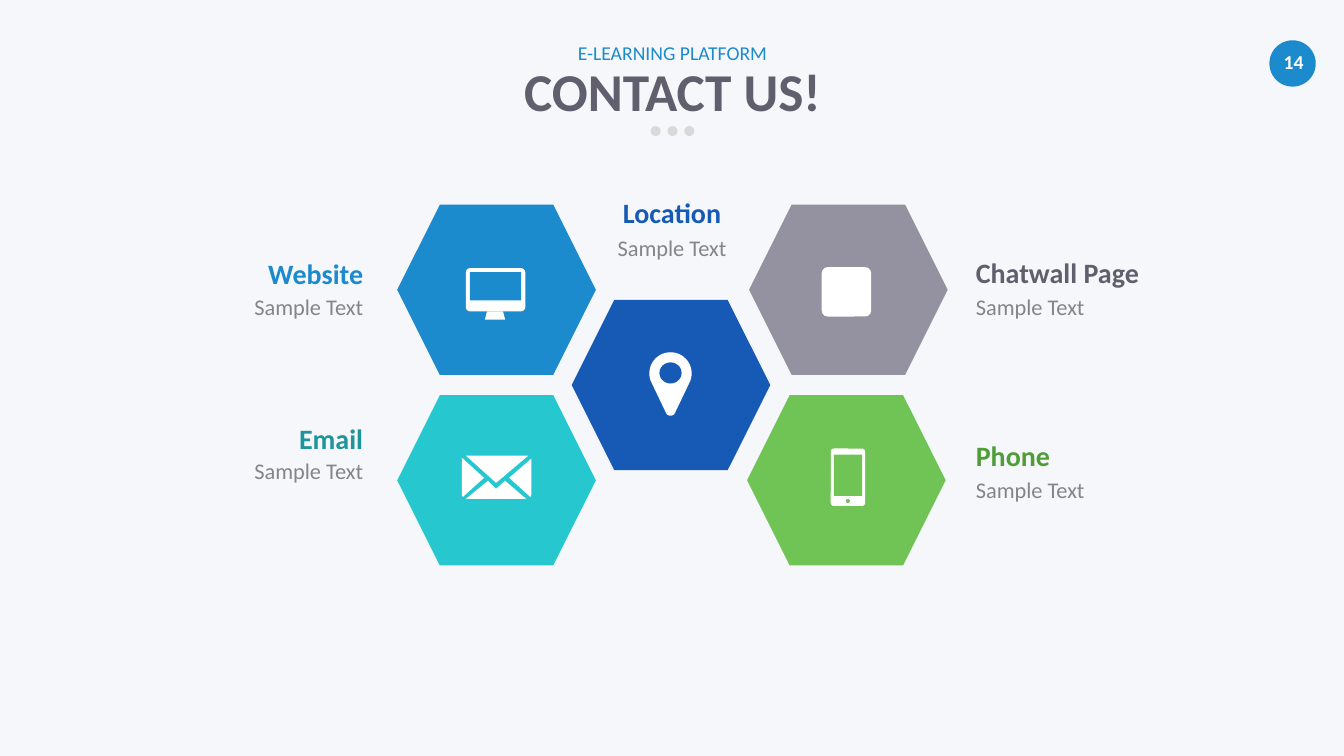
import math

import pptx
import pptx.dml.color
import pptx.enum.shapes
import pptx.enum.text
import pptx.util

Inches = pptx.util.Inches
Shape = pptx.enum.shapes.MSO_SHAPE
Align = pptx.enum.text.PP_ALIGN
Anchor = pptx.enum.text.MSO_ANCHOR

COLORS = {
    "background": "F6F7FA", "white": "FFFFFF", "dots": "D9D9D9",
    "heading": "615F6D", "caption": "858586", "sky": "1B8BCD",
    "navy": "165AB6", "teal": "27C7CF", "dark_teal": "1D959B",
    "green": "70C456", "dark_green": "4F9D37", "gray": "9492A0",
}
HEXAGON_SIZE = (1.97, 1.69)
LABEL_WIDTH, CAPTION_WIDTH = 1.91, 2.15
SHIFT = {Align.LEFT: 0, Align.CENTER: 0.5, Align.RIGHT: 1}


def color(name):
    return pptx.dml.color.RGBColor.from_string(COLORS[name])


def paint(shape, fill):
    shape.shadow.inherit = False
    shape.fill.solid()
    shape.fill.fore_color.rgb = color(fill)
    shape.line.fill.background()
    return shape


def add_preset(parent, kind, box, fill):
    return paint(parent.shapes.add_shape(kind, *map(Inches, box)), fill)


def add_outline(parent, left, top, points, fill):
    corners = [(Inches(left + x), Inches(top + y)) for x, y in points]
    builder = parent.shapes.build_freeform(*corners[0])
    builder.add_line_segments(corners[1:], close=True)
    return paint(builder.convert_to_shape(), fill)


def add_text(parent, box, text, size, fill, align, bold=False, wrap=True, inset=True):
    frame = parent.shapes.add_textbox(*map(Inches, box)).text_frame
    frame_format = {"word_wrap": wrap}
    if not inset:
        frame_format["vertical_anchor"] = Anchor.MIDDLE
        for side in ("left", "top", "right", "bottom"):
            frame_format["margin_" + side] = 0
    for name, value in frame_format.items():
        setattr(frame, name, value)
    para = frame.paragraphs[0]
    para.alignment = align
    span = para.add_run()
    span.text = text
    font_format = {"name": "Calibri", "size": pptx.util.Pt(size), "bold": bold}
    for name, value in font_format.items():
        setattr(span.font, name, value)
    span.font.color.rgb = color(fill)


def add_page_number(page, left, top):
    add_preset(page, Shape.OVAL, (left, top, 0.46, 0.46), "sky")
    add_text(page, (left + 0.02, top + 0.05, 0.44, 0.34), "14", 14, "white",
             Align.CENTER, bold=True, wrap=False)


def add_header(page, left, top, width):
    add_text(page, (left, top + 0.18, width, 0.64), "CONTACT US!", 38, "heading",
             Align.CENTER, bold=True, wrap=False, inset=False)
    add_text(page, (left, top, width, 0.24), "E-LEARNING PLATFORM", 14, "sky",
             Align.CENTER, wrap=False, inset=False)
    dots = page.shapes.add_group_shape()
    for index in (-1, 0, 1):
        center = left + width / 2 + index * 0.167
        add_preset(dots, Shape.OVAL, (center - 0.05, top + 0.85, 0.1, 0.1), "dots")


def add_label(page, left, top, title, fill, align, gap):
    group = page.shapes.add_group_shape()
    title_left = left + (CAPTION_WIDTH - LABEL_WIDTH) * SHIFT[align]
    add_text(group, (title_left, top, LABEL_WIDTH, 0.44), title, 20, fill, align, bold=True)
    add_text(group, (left, top + gap, CAPTION_WIDTH, 0.37), "Sample Text", 16, "caption", align)


def draw_monitor(group, left, top, back):
    frame = add_preset(group, Shape.ROUNDED_RECTANGLE, (left, top, 0.59, 0.43), "white")
    frame.adjustments[0] = 0.1
    add_preset(group, Shape.RECTANGLE, (left + 0.04, top + 0.04, 0.51, 0.28), back)
    add_preset(group, Shape.TRAPEZOID, (left + 0.19, top + 0.43, 0.2, 0.08), "white")


def draw_envelope(group, left, top, back):
    flaps = [
        [(0.04, 0), (0.66, 0), (0.34, 0.27)],
        [(0.69, 0.03), (0.47, 0.22), (0.68, 0.41), (0.69, 0.39)],
        [(0, 0.02), (0.22, 0.22), (0.01, 0.41), (0, 0.39)],
        [(0.34, 0.33), (0.26, 0.25), (0.04, 0.43), (0.64, 0.43), (0.43, 0.25)],
    ]
    for flap in flaps:
        add_outline(group, left, top, flap, "white")


def draw_pin(group, left, top, back):
    def arc(center_y, radius, start, stop):
        angles = [math.radians(angle) for angle in range(start, stop + 1, 5)]
        return [(0.21 + radius * math.cos(angle), center_y + radius * math.sin(angle))
                for angle in angles]

    points = arc(0.21, 0.21, 160, 380) + arc(0.58, 0.05, 20, 160)
    add_outline(group, left, top, points, "white")
    add_preset(group, Shape.OVAL, (left + 0.1, top + 0.1, 0.22, 0.21), back)


def draw_phone(group, left, top, back):
    case = add_preset(group, Shape.ROUNDED_RECTANGLE, (left, top, 0.34, 0.57), "white")
    case.adjustments[0] = 0.09
    add_preset(group, Shape.RECTANGLE, (left + 0.03, top + 0.06, 0.28, 0.41), back)
    add_preset(group, Shape.OVAL, (left + 0.15, top + 0.5, 0.04, 0.04), back)


def draw_social(group, left, top, back):
    tile = add_preset(group, Shape.ROUNDED_RECTANGLE, (left, top, 0.49, 0.49), "white")
    tile.adjustments[0] = 0.12


def add_hexagon(page, left, top, fill, draw_icon, icon_x, icon_y):
    group = page.shapes.add_group_shape()
    add_preset(group, Shape.HEXAGON, (left, top, *HEXAGON_SIZE), fill)
    draw_icon(group, left + icon_x, top + icon_y, fill)


def add_contacts(page, left, top):
    left_label, right_label = left - 2.39, left + 5.64
    labels = [
        (left + 1.65, top - 0.14, "Location", "navy", Align.CENTER, 0.38),
        (left_label, top + 0.47, "Website", "sky", Align.RIGHT, 0.36),
        (right_label, top + 0.46, "Chatwall Page", "heading", Align.LEFT, 0.37),
        (left_label, top + 2.1, "Email", "dark_teal", Align.RIGHT, 0.36),
        (right_label, top + 2.27, "Phone", "dark_green", Align.LEFT, 0.37),
    ]
    for label in labels:
        add_label(page, *label)
    row = 1.89
    hexagons = [
        (left, top + row, "teal", draw_envelope, 0.64, 0.6),
        (left + 3.47, top + row, "green", draw_phone, 0.83, 0.53),
        (left + 1.73, top + row / 2, "navy", draw_pin, 0.77, 0.52),
        (left, top, "sky", draw_monitor, 0.68, 0.63),
        (left + 3.49, top, "gray", draw_social, 0.72, 0.62),
    ]
    for hexagon in hexagons:
        add_hexagon(page, *hexagon)


def main():
    deck = pptx.Presentation()
    deck.slide_width, deck.slide_height = Inches(13.33), Inches(7.5)
    page = deck.slides.add_slide(deck.slide_layouts[6])
    page.background.fill.solid()
    page.background.fill.fore_color.rgb = color("background")
    add_page_number(page, 12.59, 0.4)
    add_header(page, 5.16, 0.4, 3.02)
    add_contacts(page, 3.94, 2.03)
    deck.save("out.pptx")


if __name__ == "__main__":
    main()
